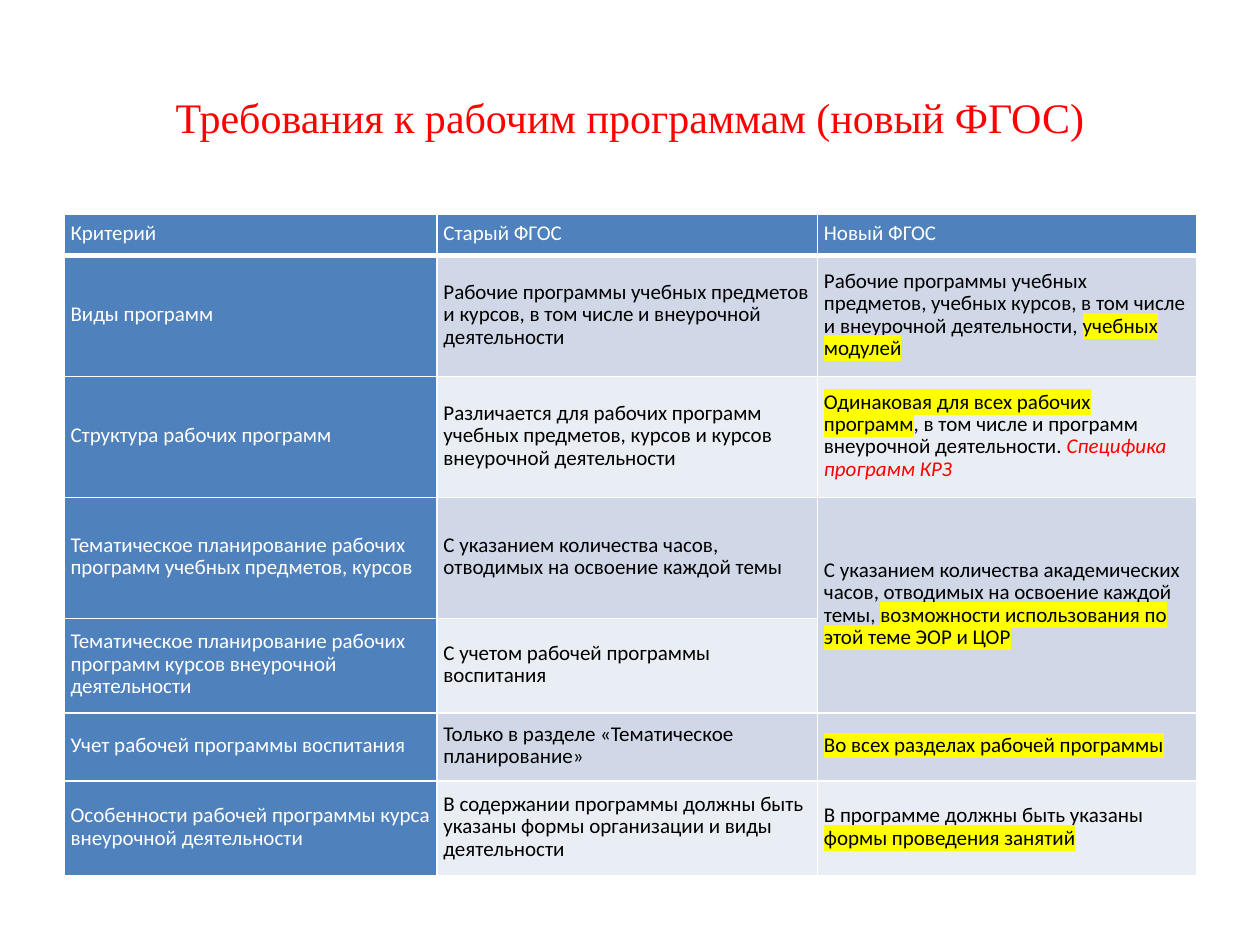
from dataclasses import dataclass
from lxml.etree import Element, SubElement
from pptx import Presentation
from pptx.dml.color import RGBColor
from pptx.enum.text import MSO_ANCHOR, PP_ALIGN
from pptx.oxml.ns import qn
from pptx.util import Inches, Pt


@dataclass(frozen=True)
class Theme:
    head: str = "4F81BD"
    bands: tuple = ("E9EDF4", "D0D8E8")
    white: str = "FFFFFF"
    black: str = "000000"
    red: str = "FF0000"
    mark: str = "FFFF00"
    title: int = 24
    body: int = 12
    serif: str = "Times New Roman"
    sans: str = "Calibri"


THEME = Theme()
WIDTHS = (2.96, 3.02, 3.01)
HEIGHTS = (0.33, 0.96, 0.96, 0.96, 0.75, 0.54, 0.75)
PLAIN, MARK, NOTE = "plain", "mark", "note"

ROWS = (
    ("Критерий", "Старый ФГОС", [("Новый ФГОС", PLAIN)]),
    ("Виды программ",
     "Рабочие программы учебных предметов и курсов, в том числе и внеурочной деятельности",
     [("Рабочие программы учебных предметов, учебных курсов, "
       "в том числе и внеурочной деятельности, ", PLAIN),
      ("учебных модулей", MARK)]),
    ("Структура рабочих программ",
     "Различается для рабочих программ учебных предметов, курсов и курсов внеурочной деятельности",
     [("Одинаковая для всех рабочих программ", MARK),
      (", в том числе и программ внеурочной деятельности. ", PLAIN),
      ("Специфика программ КРЗ", NOTE)]),
    ("Тематическое планирование рабочих программ учебных предметов, курсов",
     "С указанием количества часов, отводимых на освоение каждой темы",
     [("С указанием количества академических часов, отводимых на освоение каждой темы, ", PLAIN),
      ("возможности использования по этой теме ЭОР и ЦОР", MARK)]),
    ("Тематическое планирование рабочих программ курсов внеурочной деятельности",
     "С учетом рабочей программы воспитания", []),
    ("Учет рабочей программы воспитания",
     "Только в разделе «Тематическое планирование»",
     [("Во всех разделах рабочей программы", MARK)]),
    ("Особенности рабочей программы курса внеурочной деятельности",
     "В содержании программы должны быть указаны формы организации и виды деятельности",
     [("В программе должны быть указаны ", PLAIN),
      ("формы проведения занятий", MARK)]),
)


def style_run(run, face, size, color):
    run.font.name = face
    run.font.size = Pt(size)
    run.font.color.rgb = RGBColor.from_string(color)


def mark_run(run):
    tint = Element(qn("a:highlight"))
    SubElement(tint, qn("a:srgbClr"), val=THEME.mark)
    run._r.get_or_add_rPr().find(qn("a:solidFill")).addnext(tint)


def add_title(slide, text):
    title = slide.shapes.title
    title.left, title.top = Inches(0.5), Inches(0.3)
    title.width, title.height = Inches(9), Inches(1.25)
    frame = title.text_frame
    frame.text = text
    frame.vertical_anchor = MSO_ANCHOR.MIDDLE
    line = frame.paragraphs[0]
    line.alignment = PP_ALIGN.CENTER
    style_run(line.runs[0], THEME.serif, THEME.title, THEME.red)


def set_edges(cell, low):
    props = cell._tc.get_or_add_tcPr()
    for side, width in (("L", 1), ("R", 1), ("T", 1), ("B", low)):
        edge = SubElement(props, qn(f"a:ln{side}"), w=str(Pt(width)))
        fill = SubElement(edge, qn("a:solidFill"))
        SubElement(fill, qn("a:srgbClr"), val=THEME.white)


def style_cell(cell, fill, low):
    set_edges(cell, low)
    cell.fill.solid()
    cell.fill.fore_color.rgb = RGBColor.from_string(fill)
    cell.vertical_anchor = MSO_ANCHOR.MIDDLE
    cell.margin_left = cell.margin_right = Inches(0.05)
    cell.margin_top = cell.margin_bottom = Inches(0.05)


def fill_cell(cell, parts, color):
    line = cell.text_frame.paragraphs[0]
    line.line_spacing = Pt(12.8)
    line.space_after = Pt(7.5)
    for text, kind in parts:
        run = line.add_run()
        run.text = text
        style_run(run, THEME.sans, THEME.body, THEME.red if kind == NOTE else color)
        if kind == MARK:
            mark_run(run)
        if kind == NOTE:
            run.font.italic = True


def add_grid(slide):
    frame = slide.shapes.add_table(
        len(ROWS), len(WIDTHS), Inches(0.51), Inches(1.7),
        Inches(sum(WIDTHS)), Inches(sum(HEIGHTS)))
    table = frame.table
    for col, width in zip(table.columns, WIDTHS):
        col.width = Inches(width)
    for row, height in zip(table.rows, HEIGHTS):
        row.height = Inches(height)
    for r, (name, old, new) in enumerate(ROWS):
        for c, parts in enumerate(([(name, PLAIN)], [(old, PLAIN)], new)):
            cell = table.cell(r, c)
            head = r == 0 or c == 0
            style_cell(cell, THEME.head if head else THEME.bands[r % 2], 1 if r else 3)
            fill_cell(cell, parts, THEME.white if head else THEME.black)
    table.cell(3, 2).merge(table.cell(4, 2))


def main():
    deck = Presentation()
    deck.slide_width, deck.slide_height = Inches(10), Inches(7.5)
    slide = deck.slides.add_slide(deck.slide_layouts[5])
    add_title(slide, "Требования к рабочим программам (новый ФГОС)")
    add_grid(slide)
    deck.save("out.pptx")


if __name__ == "__main__":
    main()
